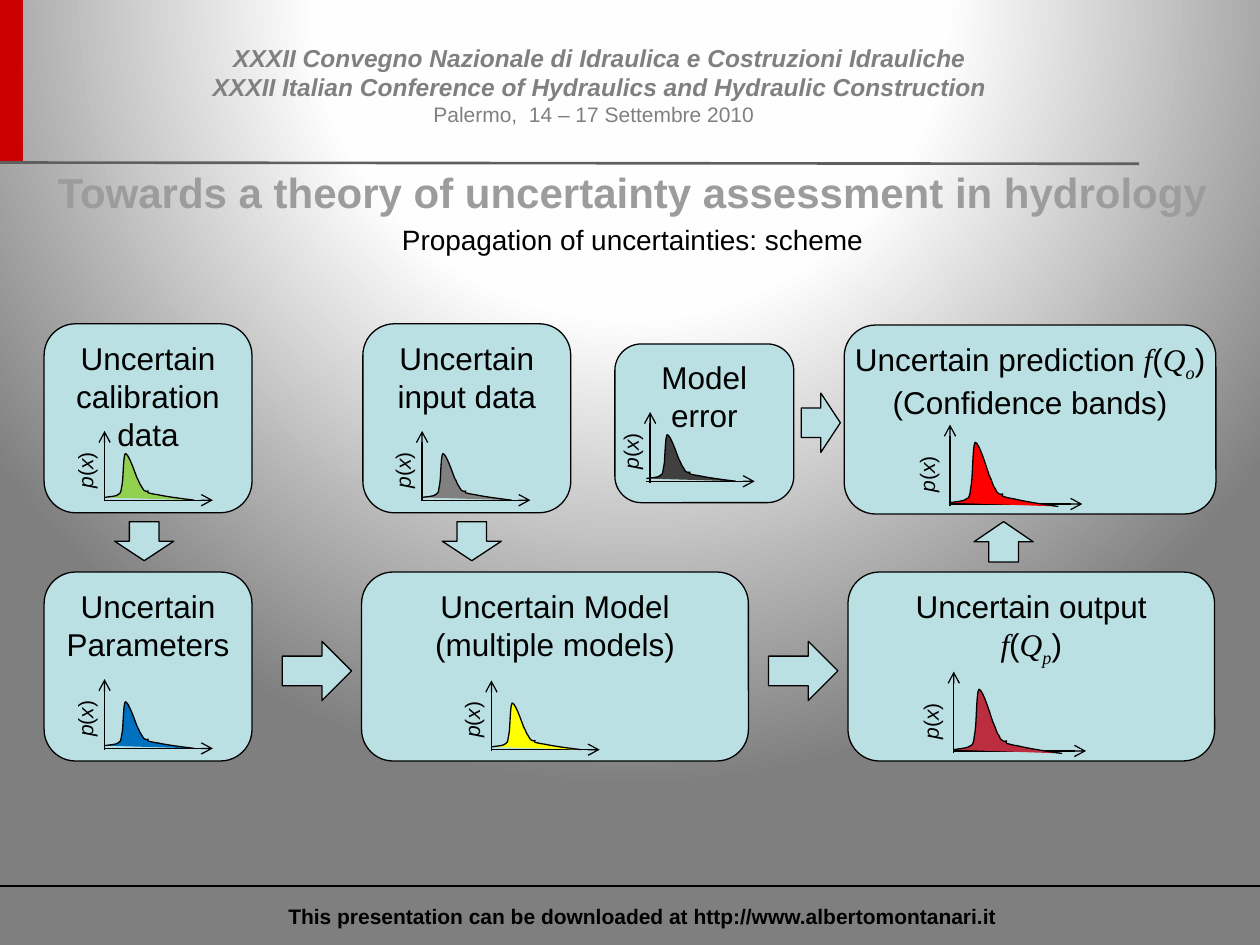
from dataclasses import dataclass

from lxml.etree import SubElement
from pptx import Presentation
from pptx.dml.color import RGBColor
from pptx.enum.shapes import MSO_CONNECTOR, MSO_SHAPE
from pptx.enum.text import MSO_ANCHOR, PP_ALIGN
from pptx.oxml.ns import qn
from pptx.util import Inches, Pt


@dataclass(frozen=True)
class Theme:
    font: str = "Arial"
    math_font: str = "Times New Roman"
    black: str = "000000"
    node: str = "BBE0E3"
    title: str = "9C9C9C"
    header: str = "808080"
    rule: str = "5F5F5F"
    accent: str = "CC0000"
    title_size: float = 24
    node_size: float = 18
    subtitle_size: float = 16
    header_size: float = 14
    small_size: float = 12
    outline: float = 0.75


@dataclass(frozen=True)
class PlotSize:
    """Proportions of a density plot, in inches from the curve's top left."""
    width: float
    height: float
    axis_length: float
    baseline: float
    axis_bottom: float
    axis_top: float
    label_left: float
    label_top: float
    label_width: float


THEME = Theme()
SMALL = PlotSize(0.71, 0.37, 0.86, 0.37, 0.38, -0.18, -0.43, -0.05, 0.55)
LARGE = PlotSize(0.86, 0.51, 1.05, 0.49, 0.51, -0.14, -0.56, -0.03, 0.75)

# Bezier segments of the skewed density, on a grid of 86 by 51
CURVE_GRID = (86, 51)
CURVE_START = (0, 48)
CURVE = [
    ((5, 47), (11, 47), (13, 45)), ((16, 44), (15, 42), (16, 40)),
    ((16, 38), (16, 40), (17, 33)), ((18, 27), (18, 2), (20, 0)),
    ((23, 0), (29, 20), (31, 26)), ((34, 32), (34, 35), (36, 37)),
    ((37, 40), (38, 40), (39, 41)), ((40, 42), (41, 41), (42, 41)),
    ((42, 41), (40, 42), (42, 43)), ((43, 43), (44, 44), (51, 45)),
    ((59, 47), (72, 49), (86, 51)),
]


def paint(shape, fill):
    shape.shadow.inherit = False
    shape.fill.solid()
    shape.fill.fore_color.rgb = RGBColor.from_string(fill)
    shape.line.color.rgb = RGBColor.from_string(THEME.black)
    shape.line.width = Pt(THEME.outline)


def write(frame, lines, size, color=THEME.black, align=PP_ALIGN.CENTER):
    """Each line is a list of (text, style) spans."""
    frame.word_wrap = True
    frame.vertical_anchor = MSO_ANCHOR.TOP
    for index, line in enumerate(lines):
        para = frame.paragraphs[0] if index == 0 else frame.add_paragraph()
        para.alignment = align
        for text, style in line:
            span = para.add_run()
            span.text = text
            font = span.font
            font.name = THEME.math_font if "math" in style else THEME.font
            font.size = Pt(size)
            font.color.rgb = RGBColor.from_string(color)
            font.bold = "bold" in style
            font.italic = "italic" in style or "math" in style
            if "sub" in style:
                font._element.set("baseline", "-25000")


def add_text(page, place, lines, size, color=THEME.black, align=PP_ALIGN.CENTER):
    box = page.shapes.add_textbox(*map(Inches, place))
    write(box.text_frame, lines, size, color, align)
    return box


def add_line(page, start, end, width=THEME.outline, color=THEME.black, arrow=False):
    line = page.shapes.add_connector(MSO_CONNECTOR.STRAIGHT, *map(Inches, start + end))
    line.line.width = Pt(width)
    line.line.color.rgb = RGBColor.from_string(color)
    if arrow:
        SubElement(line.line._get_or_add_ln(), qn("a:tailEnd"), type="arrow")
    SubElement(line._element.spPr, qn("a:effectLst"))


def add_node(page, place, lines, side_inset=0.1):
    node = page.shapes.add_shape(MSO_SHAPE.ROUNDED_RECTANGLE, *map(Inches, place))
    paint(node, THEME.node)
    node.text_frame.margin_left = node.text_frame.margin_right = Inches(side_inset)
    write(node.text_frame, lines, THEME.node_size)


def add_arrow(page, left, top, height=0.31, rotation=0):
    arrow = page.shapes.add_shape(MSO_SHAPE.DOWN_ARROW, Inches(left), Inches(top),
                                  Inches(0.47), Inches(height))
    arrow.rotation = rotation
    paint(arrow, THEME.node)


def add_curve(page, left, top, fill, size):
    scale = (Inches(size.width) / CURVE_GRID[0], Inches(size.height) / CURVE_GRID[1])
    builder = page.shapes.build_freeform(*CURVE_START, scale=scale)
    builder.add_line_segments([segment[-1] for segment in CURVE], close=False)
    curve = builder.convert_to_shape(Inches(left), Inches(top))
    # Turn the straight segments into Bezier segments
    outline = curve._element.find(".//" + qn("a:path"))
    for straight in outline.findall(qn("a:lnTo")):
        outline.remove(straight)
    for segment in CURVE:
        bend = SubElement(outline, qn("a:cubicBezTo"))
        for x, y in segment:
            SubElement(bend, qn("a:pt"), x=str(x), y=str(y))
    paint(curve, fill)


def add_density(page, left, top, fill, size=SMALL, axis_shift=0):
    base = top + size.baseline
    add_line(page, (left, base), (left + size.axis_length, base), arrow=True)
    axis = left + axis_shift
    add_line(page, (axis, top + size.axis_bottom), (axis, top + size.axis_top), arrow=True)
    add_curve(page, left, top, fill, size)
    label = add_text(page, (axis + size.label_left, top + size.label_top,
                            size.label_width, 0.3),
                     [[("p", "italic"), ("(", ""), ("x", "italic"), (")", "")]],
                     THEME.small_size, align=PP_ALIGN.LEFT)
    label.rotation = 270


def set_background(page):
    page.background.fill.gradient()
    gradient = page.element.find(".//" + qn("a:gradFill"))
    for child in list(gradient):
        gradient.remove(child)
    stops = SubElement(gradient, qn("a:gsLst"))
    for position, color in ((0, "FFFFFF"), (40, "FEFEFE"), (100, "7F7F7F")):
        stop = SubElement(stops, qn("a:gs"), pos=str(position * 1000))
        SubElement(stop, qn("a:srgbClr"), val=color)
    circle = SubElement(gradient, qn("a:path"), path="circle")
    SubElement(circle, qn("a:fillToRect"), l="50000", t="-80000", r="50000", b="180000")


def add_frame(page):
    add_line(page, (0.09, 0), (0.09, 1.3), 13.5, THEME.accent)
    add_line(page, (0, 1.29), (9.04, 1.3), 1.5, THEME.rule)
    add_line(page, (0, 7.03), (10, 7.03), 1.25)
    header = add_text(page, (0.7, 0.29, 8.12, 0.77), [
        [("XXXII Convegno Nazionale di Idraulica e Costruzioni Idrauliche", "bold italic")],
        [("XXXII Italian Conference of Hydraulics and Hydraulic Construction", "bold italic")],
        [("Palermo,  14 – 17 Settembre 2010  ", "")],
    ], THEME.header_size, THEME.header)
    header.text_frame.paragraphs[-1].runs[0].font.size = Pt(THEME.small_size)
    add_text(page, (2.19, 7.12, 6.33, 0.3),
             [[("This presentation can be downloaded at http://www.albertomontanari.it", "bold")]],
             THEME.small_size, align=PP_ALIGN.LEFT)


def add_title(page):
    title = page.shapes.title
    title.left, title.top, title.width, title.height = map(Inches, (0.3, 1.27, 9.44, 0.83))
    frame = title.text_frame
    write(frame, [[("Towards a theory of uncertainty assessment in hydrology", "bold")],
                  [("Propagation of uncertainties: scheme", "")]],
          THEME.title_size, THEME.title)
    frame.word_wrap = False
    frame.paragraphs[0].space_before = Pt(0)
    subtitle = frame.paragraphs[1]
    subtitle.space_before = Pt(3.2)
    subtitle.runs[0].font.size = Pt(THEME.subtitle_size)
    subtitle.runs[0].font.color.rgb = RGBColor.from_string(THEME.black)


def add_scheme(page):
    # Input data and the models they feed
    add_node(page, (2.88, 2.57, 1.65, 1.5), [[("Uncertain input data", "")]])
    add_density(page, 3.35, 3.6, "808080")
    add_arrow(page, 3.51, 4.14)
    add_node(page, (2.87, 4.54, 3.07, 1.5),
             [[("Uncertain Model", "")], [("(multiple models)", "")]])
    add_density(page, 3.9, 5.58, "FFFF00")
    add_arrow(page, 2.28, 5.05, height=0.55, rotation=270)

    # Parameters and their calibration data
    add_node(page, (0.35, 4.54, 1.65, 1.5), [[("Uncertain Parameters", "")]])
    add_density(page, 0.83, 5.57, "0070C0")
    add_node(page, (0.35, 2.57, 1.65, 1.5), [[("Uncertain calibration data", "")]])
    add_density(page, 0.83, 3.6, "92D050")
    add_arrow(page, 0.91, 4.14)

    # Model output
    add_arrow(page, 6.14, 5.05, height=0.55, rotation=270)
    add_node(page, (6.73, 4.54, 2.91, 1.5), [
        [("Uncertain output", "")],
        [("f", "math"), ("(", ""), ("Q", "math"), ("p", "math sub"), (")", "")]])
    add_density(page, 7.57, 5.47, "BB2D3F", LARGE)

    # Prediction and model error
    add_arrow(page, 7.73, 4.14, height=0.32, rotation=180)
    add_node(page, (6.7, 2.58, 2.95, 1.5), [[
        ("Uncertain prediction ", ""), ("f", "math"), ("(", ""), ("Q", "math"),
        ("o", "math sub"), (") (Confidence bands)", "")]], side_inset=0)
    add_density(page, 7.54, 3.51, "FF0000", LARGE)
    add_node(page, (4.88, 2.73, 1.42, 1.26), [[("Model error", "")]])
    add_density(page, 5.13, 3.45, "404040", axis_shift=0.03)
    add_arrow(page, 6.28, 3.2, rotation=270)


def main():
    deck = Presentation()
    deck.slide_width, deck.slide_height = Inches(10), Inches(7.5)
    page = deck.slides.add_slide(deck.slide_layouts[5])
    set_background(page)
    add_frame(page)
    add_title(page)
    add_scheme(page)
    deck.save("out.pptx")


if __name__ == "__main__":
    main()
